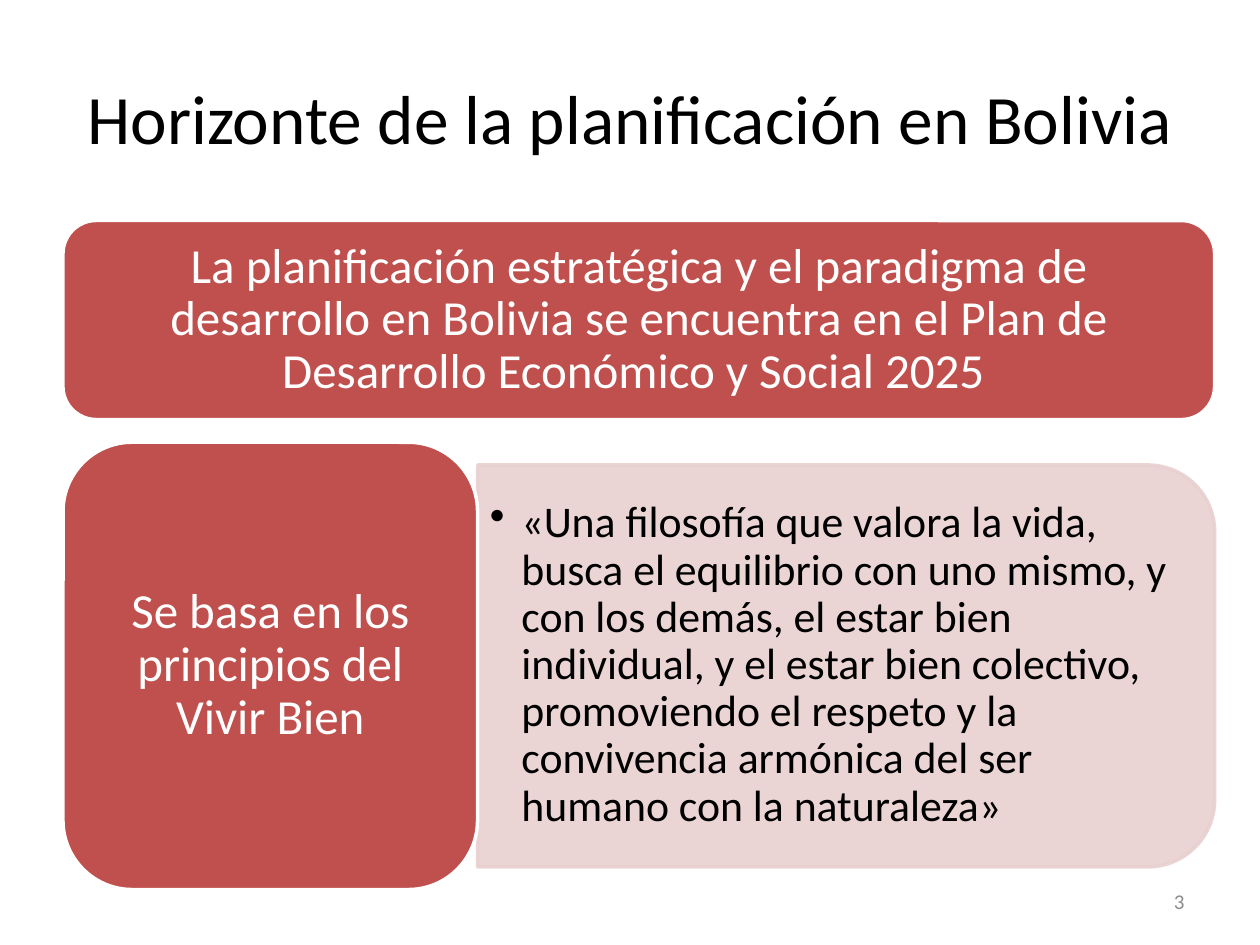
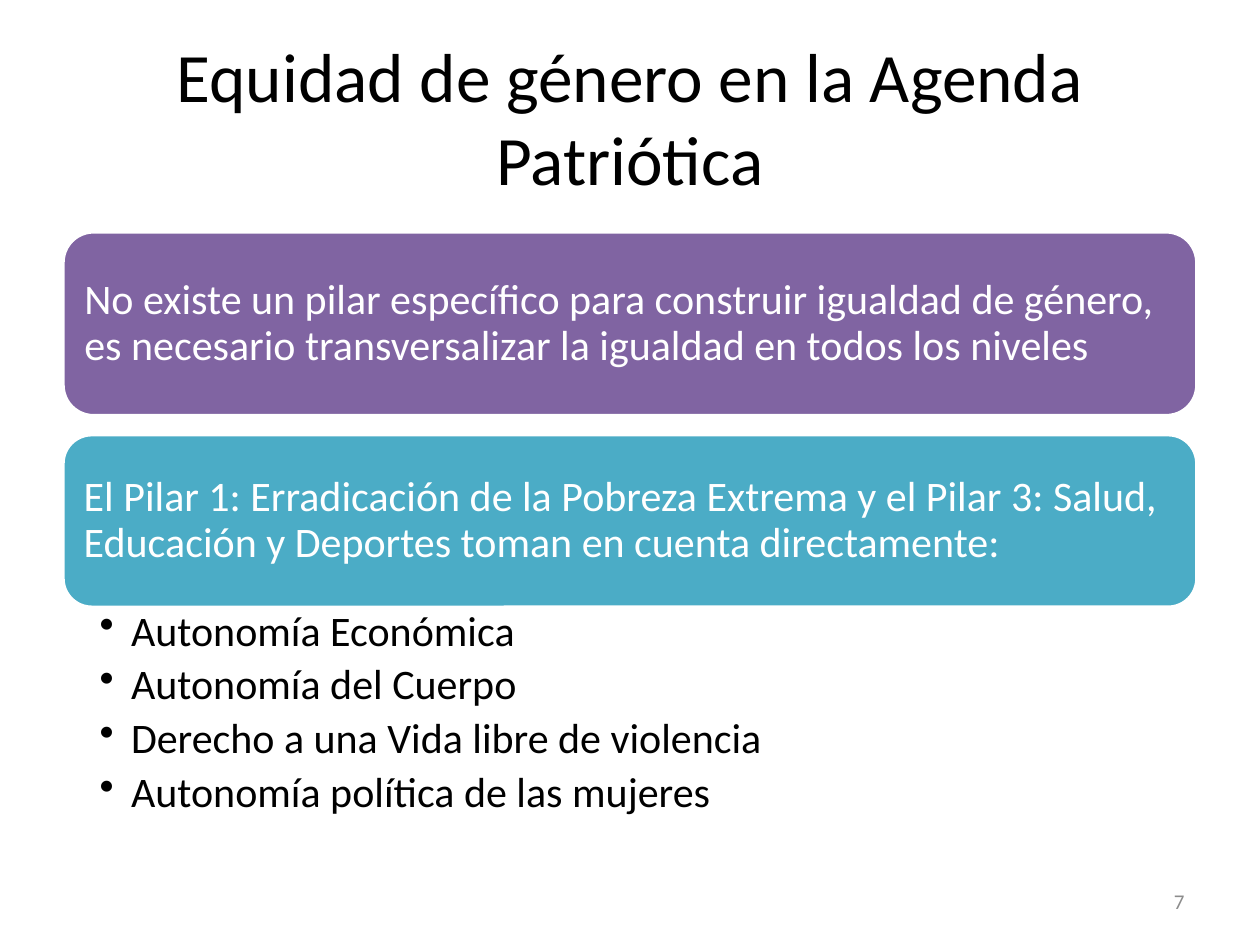
from typing import NamedTuple

from lxml.etree import SubElement
from pptx import Presentation
from pptx.dml.color import RGBColor
from pptx.enum.shapes import MSO_SHAPE as Kind
from pptx.enum.text import MSO_ANCHOR as Anchor, PP_ALIGN as Align
from pptx.oxml.ns import qn
from pptx.util import Emu, Pt

SCALE = 9144  # 100 px to the inch
FONT = "Calibri"
WHITE, BLACK, GREY = "FFFFFF", "000000", "8C8C8C"
RED, PINK, PURPLE, TEAL = "C0504D", "E8D0D0", "8064A2", "4BACC6"
LEFT, WIDE = 50, 900


class Box(NamedTuple):
    left: int
    top: int
    width: int
    height: int


class Style(NamedTuple):
    size: float
    color: str = BLACK
    align: Align = Align.LEFT
    anchor: Anchor = Anchor.MIDDLE
    inset: tuple[int, int, int, int] = (10, 5, 10, 5)
    line: float = 1.0
    after: float = 0.0  # share of the text size
    bullet: bool = False


class Card(NamedTuple):
    box: Box
    fill: str
    text: str
    style: Style


TITLE = Style(39.6, align=Align.CENTER)
NUMBER = Style(12, GREY, Align.RIGHT)
CENTRED = Style(28, WHITE, Align.CENTER, inset=(12, 6, 12, 6), line=0.9, after=0.35)
PLAIN = Style(24, WHITE, inset=(10, 10, 10, 10), line=0.9, after=0.35)
QUOTE = Style(25, line=0.9, after=0.15, bullet=True)
POINTS = Style(24, anchor=Anchor.TOP, inset=(29, 3, 19, 3), line=0.9, after=0.2, bullet=True)


def px(count: float) -> Emu:
    return Emu(round(count * SCALE))


def rgb(code: str) -> RGBColor:
    return RGBColor.from_string(code)


def add_bullet(para) -> None:
    para.level = 1
    props = para._p.get_or_add_pPr()
    props.set("marL", str(px(25)))
    props.set("indent", str(px(-25)))
    SubElement(props, qn("a:buChar")).set("char", "•")


def write(frame, text: str, style: Style) -> None:
    """Fill a text frame, one paragraph for each line of text."""
    frame.word_wrap = True
    frame.vertical_anchor = style.anchor
    (frame.margin_left, frame.margin_top,
     frame.margin_right, frame.margin_bottom) = map(px, style.inset)
    frame.text = text
    for para in frame.paragraphs:
        if style.bullet:
            add_bullet(para)
        para.alignment = style.align
        para.line_spacing = style.line
        para.space_after = Pt(style.size * style.after)
        for run in para.runs:
            run.font.name = FONT
            run.font.size = Pt(style.size)
            run.font.color.rgb = rgb(style.color)


def add_text(slide, box: Box, text: str, style: Style) -> None:
    write(slide.shapes.add_textbox(*map(px, box)).text_frame, text, style)


def add_panel(slide, kind: Kind, box: Box, fill: str, edge: str):
    panel = slide.shapes.add_shape(kind, *map(px, box))
    panel.shadow.inherit = False
    panel.fill.solid()
    panel.fill.fore_color.rgb = rgb(fill)
    panel.line.color.rgb = rgb(edge)
    panel.line.width = Pt(2)
    return panel


def add_card(slide, card: Card) -> None:
    panel = add_panel(slide, Kind.ROUNDED_RECTANGLE, card.box, card.fill, WHITE)
    write(panel.text_frame, card.text, card.style)


def add_tab(slide, box: Box) -> None:
    """Draw a see-through panel whose right-hand corners are round."""
    shift = (box.width - box.height) / 2
    upright = Box(box.left + shift, box.top - shift, box.height, box.width)
    panel = add_panel(slide, Kind.ROUND_2_SAME_RECTANGLE, upright, PINK, PINK)
    panel.rotation = 90
    for color in panel._element.spPr.iter(qn("a:srgbClr")):
        SubElement(color, qn("a:alpha")).set("val", "90000")


def add_slide(deck, title: str, number: int):
    slide = deck.slides.add_slide(deck.slide_layouts[6])
    add_text(slide, Box(LEFT, 30, WIDE, 125), title, TITLE)
    add_text(slide, Box(717, 695, 233, 40), str(number), NUMBER)
    return slide


def add_vision(deck) -> None:
    slide = add_slide(deck, "Horizonte de la planificación en Bolivia", 3)
    add_tab(slide, Box(379, 369, 585, 319))
    quote = (
        "«Una filosofía que valora la vida, busca el equilibrio con uno mismo, "
        "y con los demás, el estar bien individual, y el estar bien colectivo, "
        "promoviendo el respeto y la convivencia armónica del ser humano con la naturaleza»"
    )
    add_text(slide, Box(379, 384, 570, 288), quote, QUOTE)
    plan = (
        "La planificación estratégica y el paradigma de desarrollo en Bolivia "
        "se encuentra en el Plan de Desarrollo Económico y Social 2025 "
    )
    basis = "Se basa en los principios del Vivir Bien"
    add_card(slide, Card(Box(LEFT, 175, 914, 158), RED, plan, CENTRED))
    add_card(slide, Card(Box(LEFT, 351, 329, 355), RED, basis, CENTRED))


def add_gender(deck) -> None:
    slide = add_slide(deck, "Equidad de género en la Agenda Patriótica", 7)
    need = (
        "No existe un pilar específico para construir igualdad de género, "
        "es necesario transversalizar la igualdad en todos los niveles"
    )
    pillars = (
        "El Pilar 1: Erradicación de la Pobreza Extrema y el Pilar 3: Salud, "
        "Educación y Deportes toman en cuenta directamente:"
    )
    add_card(slide, Card(Box(LEFT, 184, WIDE, 146), PURPLE, need, PLAIN))
    add_card(slide, Card(Box(LEFT, 345, WIDE, 137), TEAL, pillars, PLAIN))
    rights = (
        "Autonomía Económica",
        "Autonomía del Cuerpo",
        "Derecho a una Vida libre de violencia",
        "Autonomía política de las mujeres",
    )
    add_text(slide, Box(LEFT, 481, WIDE, 179), "\n".join(rights), POINTS)


def main() -> None:
    deck = Presentation()
    deck.slide_width, deck.slide_height = px(1000), px(750)
    add_vision(deck)
    add_gender(deck)
    deck.save("out.pptx")


if __name__ == "__main__":
    main()
